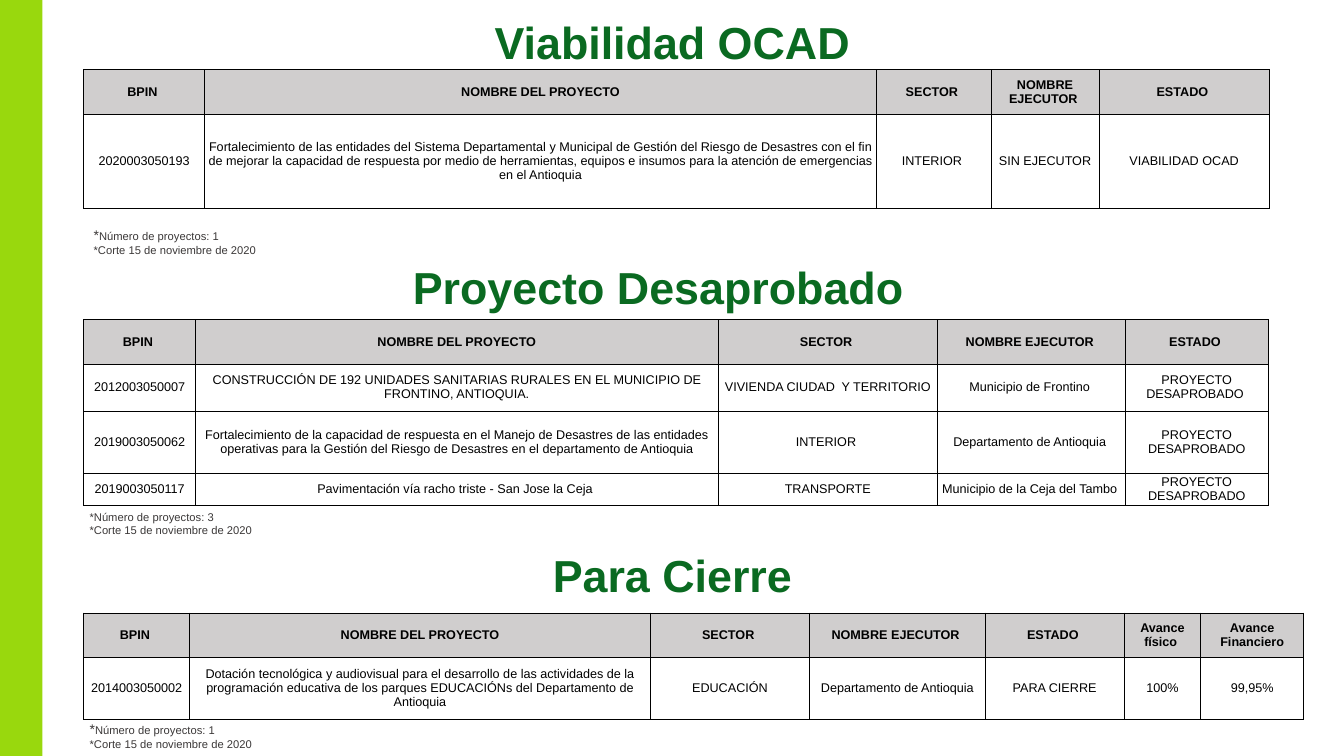
from lxml.etree import SubElement
from pptx import Presentation
from pptx.dml.color import RGBColor
from pptx.enum.shapes import MSO_SHAPE
from pptx.enum.text import MSO_ANCHOR, MSO_AUTO_SIZE, PP_ALIGN
from pptx.oxml.ns import qn
from pptx.util import Emu, Pt

PX = 9144
HEADINGS = ["BPIN ", "NOMBRE DEL PROYECTO", "SECTOR ", "NOMBRE EJECUTOR ", "ESTADO "]
CUTOFF = "*Corte 15 de noviembre de 2020"

SECTIONS = [
    {
        "title": "Viabilidad OCAD", "title_box": (128, 10, 1078, 64),
        "table_at": (83, 69), "columns": [120, 666, 114, 107, 169], "heights": [44, 94],
        "rows": [
            HEADINGS,
            ["2020003050193",
             "Fortalecimiento de las entidades del Sistema Departamental y Municipal de Gestión del Riesgo de Desastres con el fin de mejorar la capacidad de respuesta por medio de herramientas, equipos e insumos para la atención de emergencias en el Antioquia",
             "INTERIOR ", "SIN EJECUTOR", "VIABILIDAD OCAD"],
        ],
        "note_box": (83, 220, 208, 40), "count": 1, "star_size": 10,
    },
    {
        "title": "Proyecto Desaprobado", "title_box": (114, 253, 1078, 64),
        "table_at": (83, 317), "columns": [111, 518, 218, 186, 142], "heights": [44, 47, 62, 31],
        "rows": [
            HEADINGS,
            ["2012003050007",
             "CONSTRUCCIÓN DE 192 UNIDADES SANITARIAS RURALES EN EL MUNICIPIO DE FRONTINO, ANTIOQUIA.",
             "VIVIENDA CIUDAD  Y TERRITORIO", "Municipio de Frontino ", "PROYECTO DESAPROBADO "],
            ["2019003050062",
             "Fortalecimiento de la capacidad de respuesta en el Manejo de Desastres de las entidades operativas para la Gestión del Riesgo de Desastres en el departamento de Antioquia",
             "INTERIOR ", "Departamento de Antioquia ", "PROYECTO DESAPROBADO"],
            ["2019003050117", "Pavimentación vía racho triste - San Jose la Ceja ",
             "TRANSPORTE", "Municipio de la Ceja del Tambo ", "PROYECTO DESAPROBADO"],
        ],
        "note_box": (79, 501, 424, 37), "count": 3, "star_size": 8,
    },
    {
        "title": "Para Cierre", "title_box": (128, 538, 1078, 64),
        "table_at": (83, 608), "columns": [105, 457, 158, 174, 138, 76, 102], "heights": [44, 62],
        "rows": [
            HEADINGS + ["Avance físico ", "Avance Financiero"],
            ["2014003050002",
             "Dotación tecnológica y audiovisual para el desarrollo de las actividades de la programación educativa de los parques EDUCACIÓNs del Departamento de Antioquia",
             "EDUCACIÓN", "Departamento de Antioquia", "PARA CIERRE", "100%", "99,95%"],
        ],
        "note_box": (79, 710, 208, 40), "count": 1, "star_size": 10,
    },
]


def color(value):
    return RGBColor.from_string(value)


def write(para, text, size, ink, bold=False):
    span = para.add_run()
    span.text = text
    for name, value in {"name": "Arial", "size": Pt(size), "bold": bold}.items():
        setattr(span.font, name, value)
    span.font.color.rgb = color(ink)


deck = Presentation()
deck.slide_width, deck.slide_height = Emu(1333 * PX), Emu(750 * PX)
page = deck.slides.add_slide(deck.slide_layouts[5])

bar = page.shapes.add_shape(MSO_SHAPE.RECTANGLE, 0, 0, 42 * PX, 750 * PX)
bar.shadow.inherit = False
bar.fill.solid()
bar.fill.fore_color.rgb = color("99D80D")
bar.line.fill.background()

for index, section in enumerate(SECTIONS):
    left, top, width, height = (Emu(value * PX) for value in section["title_box"])
    if index == 0:
        title = page.shapes.title
        title.left, title.top, title.width, title.height = left, top, width, height
    else:
        title = page.shapes.add_textbox(left, top, width, height)
    note = page.shapes.add_textbox(*(Emu(value * PX) for value in section["note_box"]))
    for box in (title, note):
        frame_format = {"word_wrap": True, "vertical_anchor": MSO_ANCHOR.TOP,
                        "auto_size": MSO_AUTO_SIZE.SHAPE_TO_FIT_TEXT}
        for name, value in frame_format.items():
            setattr(box.text_frame, name, value)

    para = title.text_frame.paragraphs[0]
    para.alignment = PP_ALIGN.CENTER
    write(para, section["title"], 32, "0A6A21", True)

    para = note.text_frame.paragraphs[0]
    write(para, "*", section["star_size"], "3B3838")
    write(para, f"Número de proyectos: {section['count']}", 8, "3B3838")
    write(note.text_frame.add_paragraph(), CUTOFF, 8, "3B3838")

    rows, columns, heights = section["rows"], section["columns"], section["heights"]
    left, top = section["table_at"]
    table = page.shapes.add_table(len(rows), len(columns), left * PX, top * PX,
                                  sum(columns) * PX, sum(heights) * PX).table
    table.horz_banding = False
    for column, width in zip(table.columns, columns):
        column.width = Emu(width * PX)
    for row, height in zip(table.rows, heights):
        row.height = Emu(height * PX)

    for row_index, texts in enumerate(rows):
        for column_index, text in enumerate(texts):
            cell = table.cell(row_index, column_index)
            cell_format = {"margin_left": 0, "margin_right": 0, "margin_top": 0,
                           "margin_bottom": 0, "vertical_anchor": MSO_ANCHOR.MIDDLE}
            for name, value in cell_format.items():
                setattr(cell, name, value)
            properties = cell._tc.get_or_add_tcPr()
            for edge in ("a:lnL", "a:lnR", "a:lnT", "a:lnB"):
                border = SubElement(properties, qn(edge), w=str(Pt(0.5)))
                SubElement(SubElement(border, qn("a:solidFill")), qn("a:srgbClr"), val="000000")
            cell.fill.solid()
            cell.fill.fore_color.rgb = color("D0CECE" if row_index == 0 else "FFFFFF")
            para = cell.text_frame.paragraphs[0]
            para.alignment = PP_ALIGN.CENTER
            write(para, text, 9, "000000", row_index == 0)

deck.save("out.pptx")
